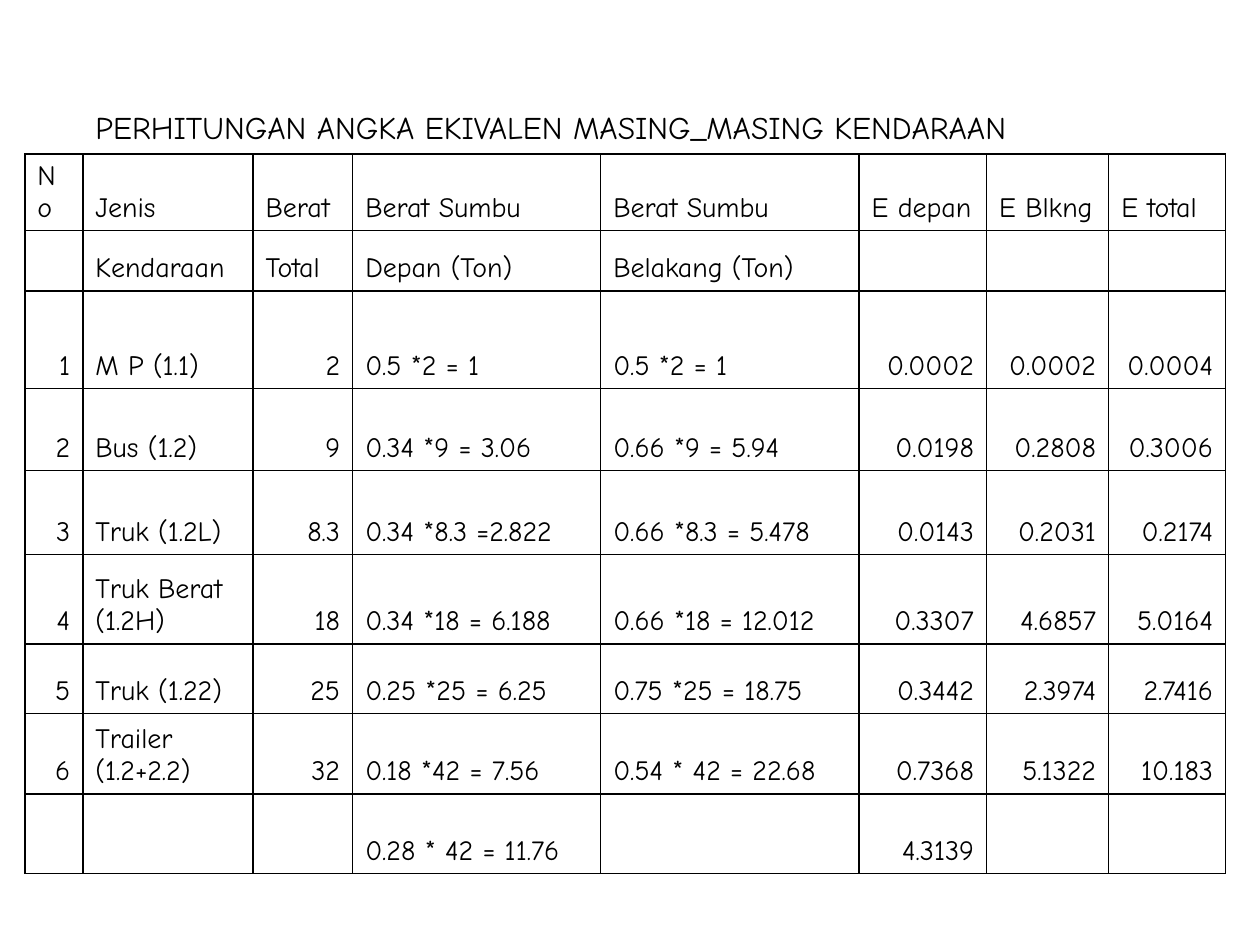
from dataclasses import dataclass

from lxml.etree import SubElement
from pptx import Presentation
from pptx.dml.color import RGBColor
from pptx.enum.text import MSO_ANCHOR, PP_ALIGN
from pptx.oxml.ns import qn
from pptx.util import Cm, Pt


@dataclass(frozen=True)
class Theme:
    font: str = "Comic Neue"
    ink: str = "000000"
    title_size: int = 18
    body_size: int = 16
    border: int = Pt(1)


@dataclass(frozen=True)
class Box:
    left: float
    top: float
    width: float
    height: float


THEME = Theme()
TITLE = "PERHITUNGAN ANGKA EKIVALEN MASING_MASING KENDARAAN"
COLUMN_SHARES = [1.17, 3.43, 2.01, 5, 5.21, 2.57, 2.46, 2.36]
ROW_SHARES = [2.97, 1.24, 1.22, 1.96, 1.65, 1.7, 1.8, 1.4, 1.63, 1.6]
NUMBER_COLUMNS = {0, 2, 5, 6, 7}
HEADINGS = [
    ["No", "Jenis", "Berat", "Berat Sumbu", "Berat Sumbu", "E depan", "E Blkng", "E total"],
    ["", "Kendaraan", "Total", "Depan (Ton)", "Belakang (Ton)", "", "", ""],
]
VEHICLES = [
    ["1", "M P (1.1)", "2", "0.5 *2 = 1", "0.5 *2 = 1", "0.0002", "0.0002", "0.0004"],
    ["2", "Bus (1.2)", "9", "0.34 *9 = 3.06", "0.66 *9 = 5.94", "0.0198", "0.2808", "0.3006"],
    ["3", "Truk (1.2L)", "8.3", "0.34 *8.3 =2.822", "0.66 *8.3 = 5.478", "0.0143", "0.2031", "0.2174"],
    ["4", "Truk Berat (1.2H)", "18", "0.34 *18 = 6.188", "0.66 *18 = 12.012", "0.3307", "4.6857", "5.0164"],
    ["5", "Truk (1.22)", "25", "0.25 *25 = 6.25", "0.75 *25 = 18.75", "0.3442", "2.3974", "2.7416"],
    ["6", "Trailer (1.2+2.2)", "32", "0.18 *42 = 7.56", "0.54 * 42 = 22.68", "0.7368", "5.1322", "10.183"],
    ["", "", "", "0.28 * 42 = 11.76", "", "4.3139", "", ""],
]


def set_borders(cell, visible_sides):
    properties = cell._tc.get_or_add_tcPr()
    for side in "LRTB":
        line = SubElement(properties, qn(f"a:ln{side}"), w=str(THEME.border))
        if side in visible_sides:
            fill = SubElement(line, qn("a:solidFill"))
            SubElement(fill, qn("a:srgbClr"), val=THEME.ink)
        else:
            SubElement(line, qn("a:noFill"))
    cell.fill.background()


def write_cell(cell, text, size, alignment=PP_ALIGN.LEFT):
    cell.vertical_anchor = MSO_ANCHOR.BOTTOM
    paragraph = cell.text_frame.paragraphs[0]
    paragraph.alignment = alignment
    paragraph.font.name = THEME.font
    paragraph.font.size = Pt(size)
    paragraph.font.color.rgb = RGBColor.from_string(THEME.ink)
    if text:
        paragraph.add_run().text = text


def add_equivalent_table(slide, box):
    table = slide.shapes.add_table(
        len(ROW_SHARES), len(COLUMN_SHARES),
        Cm(box.left), Cm(box.top), Cm(box.width), Cm(box.height),
    ).table
    table.first_row = False
    table.horz_banding = False
    for column, share in zip(table.columns, COLUMN_SHARES):
        column.width = Cm(box.width * share / sum(COLUMN_SHARES))
    for row, share in zip(table.rows, ROW_SHARES):
        row.height = Cm(box.height * share / sum(ROW_SHARES))

    for cell in table.rows[0].cells:
        set_borders(cell, "B")
    title_cell = table.cell(0, 1)
    title_cell.merge(table.cell(0, 6))
    write_cell(title_cell, TITLE, THEME.title_size)

    for row_index, values in enumerate(HEADINGS + VEHICLES, start=1):
        is_heading = row_index <= len(HEADINGS)
        for column_index, value in enumerate(values):
            is_number = not is_heading and column_index in NUMBER_COLUMNS
            alignment = PP_ALIGN.RIGHT if is_number else PP_ALIGN.LEFT
            cell = table.cell(row_index, column_index)
            set_borders(cell, "LRTB")
            write_cell(cell, value, THEME.body_size, alignment)


def main():
    presentation = Presentation()
    presentation.slide_width = Cm(25.4)
    presentation.slide_height = Cm(19.05)
    slide = presentation.slides.add_slide(presentation.slide_layouts[6])
    add_equivalent_table(slide, Box(0.5, 0.13, 24.21, 17.17))
    presentation.save("out.pptx")


if __name__ == "__main__":
    main()
